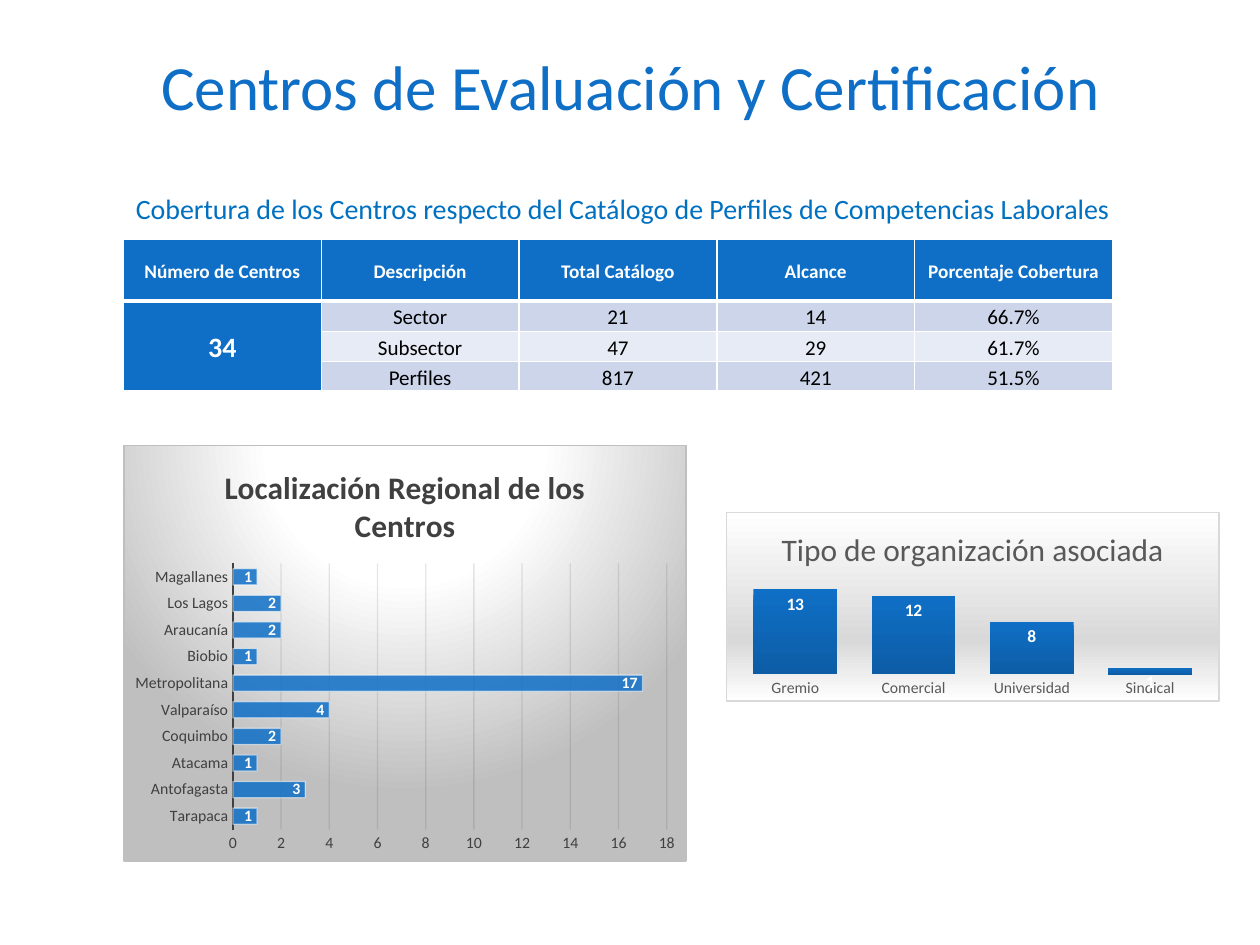
from pptx import Presentation
from pptx import oxml
from pptx import util as u
from pptx.chart.data import CategoryChartData
from pptx.dml.color import RGBColor
from pptx.enum import chart as ch, text
from pptx.oxml.ns import nsdecls

FONT = "Calibri"
BLUE = "0F6FC6"
HEADERS = ["Número de Centros", "Descripción", "Total Catálogo", "Alcance",
           "Porcentaje Cobertura"]
COVERAGE = [("Sector", "21", "14", "66.7%"),
            ("Subsector", "47", "29", "61.7%"),
            ("Perfiles", "817", "421", "51.5%")]
REGIONS = {"Tarapaca": 1, "Antofagasta": 3, "Atacama": 1, "Coquimbo": 2,
           "Valparaíso": 4, "Metropolitana": 17, "Biobio": 1, "Araucanía": 2,
           "Los Lagos": 2, "Magallanes": 1}
ORGANIZATIONS = {"Gremio": 13, "Comercial": 12, "Universidad": 8, "Sindical": 1}
LINEAR = '<a:lin ang="5400000" scaled="0"/>'
RADIAL = ('<a:path path="circle"><a:fillToRect l="50000" t="-80000" '
          'r="50000" b="180000"/></a:path>')


def rgb(color):
    return RGBColor.from_string(color)


def style(font, size, color, bold=False):
    font.name, font.size, font.bold = FONT, u.Pt(size), bold
    font.color.rgb = rgb(color)


def set_line(line, color, width):
    line.color.rgb = rgb(color)
    line.width = u.Pt(width)


def set_alpha(element, percent):
    for color in element.xpath(".//a:srgbClr"):
        color.append(oxml.parse_xml(
            f'<a:alpha {nsdecls("a")} val="{percent * 1000}"/>'))


def gradient(stops, direction):
    marks = "".join(f'<a:gs pos="{pos * 1000}"><a:srgbClr val="{color}"/></a:gs>'
                    for pos, color in stops)
    return f'<a:gradFill rotWithShape="1"><a:gsLst>{marks}</a:gsLst>{direction}</a:gradFill>'


def add_heading(slide, box):
    title = slide.shapes.title
    title.left, title.top, title.width, title.height = map(u.Inches, box)
    title.text_frame.text = "Centros de Evaluación y Certificación"
    title.text_frame.vertical_anchor = text.MSO_ANCHOR.MIDDLE
    paragraph = title.text_frame.paragraphs[0]
    paragraph.alignment = text.PP_ALIGN.LEFT
    style(paragraph.font, 36, BLUE)


def add_subtitle(slide, box):
    frame = slide.shapes.add_textbox(*map(u.Inches, box)).text_frame
    frame.word_wrap = True
    frame.auto_size = text.MSO_AUTO_SIZE.SHAPE_TO_FIT_TEXT
    frame.text = ("Cobertura de los Centros respecto del Catálogo de "
                  "Perfiles de Competencias Laborales")
    style(frame.paragraphs[0].font, 16, "0070C0")


def fill_cell(cell, words, fill, size, color, bold, top=1, bottom=1):
    cell.text = words
    cell.margin_left = cell.margin_right = u.Inches(0.07)
    cell.margin_top = cell.margin_bottom = 0
    if bold:
        cell.vertical_anchor = text.MSO_ANCHOR.MIDDLE
    paragraph = cell.text_frame.paragraphs[0]
    paragraph.alignment = text.PP_ALIGN.CENTER
    paragraph.line_spacing = 1.15
    style(paragraph.font, size, color, bold)
    properties = cell._tc.get_or_add_tcPr()
    for side, width in (("L", 1), ("R", 1), ("T", top), ("B", bottom)):
        properties.append(oxml.parse_xml(
            f'<a:ln{side} {nsdecls("a")} w="{u.Pt(width)}"><a:solidFill>'
            f'<a:srgbClr val="FFFFFF"/></a:solidFill></a:ln{side}>'))
    cell.fill.solid()
    cell.fill.fore_color.rgb = rgb(fill)


def add_coverage_table(slide, box):
    table = slide.shapes.add_table(4, 5, *map(u.Inches, box)).table
    table.horz_banding = False
    for column in table.columns:
        column.width = u.Inches(box[2] / 5)
    for row, height in zip(table.rows, (0.49, 0.24, 0.24, 0.21)):
        row.height = u.Inches(height)
    for c, header in enumerate(HEADERS):
        fill_cell(table.cell(0, c), header, BLUE, 11, "FFFFFF", True, bottom=3)
    table.cell(1, 0).merge(table.cell(3, 0))
    fill_cell(table.cell(1, 0), "34", BLUE, 16, "FFFFFF", True, top=3)
    for r, values in enumerate(COVERAGE, 1):
        band = "CCD5EA" if r % 2 else "E7EBF5"
        for c, value in enumerate(values, 1):
            fill_cell(table.cell(r, c), value, band, 12, "000000", False,
                      top=3 if r == 1 else 1)


def add_bars(slide, box, kind, counts, title, color, bold, gap, label_size,
             background, border):
    data = CategoryChartData()
    data.categories = list(counts)
    data.add_series("Series 1", list(counts.values()))
    chart = slide.shapes.add_chart(kind, *map(u.Inches, box), data).chart
    chart.has_legend = False
    style(chart.font, 10, "000000")
    chart.has_title = True
    chart.chart_title.include_in_layout = False
    chart.chart_title.text_frame.text = title
    style(chart.chart_title.text_frame.paragraphs[0].font, 18, color, bold)
    chart._chartSpace.chart.addnext(oxml.parse_xml(
        f'<c:spPr {nsdecls("c", "a")}>{background}<a:ln w="{u.Pt(0.75)}">'
        f'<a:solidFill><a:srgbClr val="{border}"/></a:solidFill></a:ln></c:spPr>'))

    plot = chart.plots[0]
    plot.gap_width = gap
    plot.vary_by_categories = False
    plot.has_data_labels = True
    labels = plot.data_labels
    labels.show_value = True
    labels.position = ch.XL_LABEL_POSITION.INSIDE_END
    style(labels.font, label_size, "FFFFFF", True)
    for axis in (chart.category_axis, chart.value_axis):
        axis.major_tick_mark = axis.minor_tick_mark = ch.XL_TICK_MARK.NONE
        axis.has_major_gridlines = False
        style(axis.tick_labels.font, 9, color)
        axis.format.line.fill.background()
    chart.value_axis.minimum_scale = 0
    return chart


def add_regions_chart(slide, box):
    chart = add_bars(
        slide, box, ch.XL_CHART_TYPE.BAR_CLUSTERED, REGIONS,
        "Localización Regional de los Centros", "404040", True, 65, 9,
        gradient([(0, "FFFFFF"), (39, "FFFFFF"), (100, "BFBFBF")], RADIAL), "BFBFBF")
    set_line(chart.category_axis.format.line, "404040", 1.5)
    values = chart.value_axis
    values.maximum_scale, values.major_unit = 18, 2
    values.has_major_gridlines = True
    set_line(values.major_gridlines.format.line, "0D0D0D", 0.75)
    set_alpha(values._element.find(oxml.ns.qn("c:majorGridlines")), 10)
    bars = chart.plots[0].series[0]
    bars.format.fill.solid()
    bars.format.fill.fore_color.rgb = rgb(BLUE)
    set_alpha(bars._element.spPr, 85)
    set_line(bars.format.line, "FFFFFF", 0.75)
    set_alpha(bars._element.spPr.find(oxml.ns.qn("a:ln")), 50)


def add_organizations_chart(slide, box):
    chart = add_bars(
        slide, box, ch.XL_CHART_TYPE.COLUMN_CLUSTERED, ORGANIZATIONS,
        "Tipo de organización asociada", "595959", False, 41, 10,
        gradient([(0, "FFFFFF"), (68, "D9D9D9"), (100, "FFFFFF")], LINEAR), "D9D9D9")
    chart.value_axis.visible = False
    fill = chart.plots[0].series[0].format.fill
    fill.gradient()
    fill.gradient_angle = 270
    for stop, color in zip(fill.gradient_stops, (BLUE, "0D5DA6")):
        stop.color.rgb = rgb(color)


def main():
    deck = Presentation()
    deck.slide_width, deck.slide_height = u.Inches(10), u.Inches(7.5)
    slide = deck.slides.add_slide(deck.slide_layouts[5])
    add_heading(slide, (1.18, 0.29, 8.51, 0.77))
    add_subtitle(slide, (0.98, 1.47, 8.7, 0.37))
    add_coverage_table(slide, (0.98, 1.9, 7.85, 1.2))
    add_regions_chart(slide, (0.98, 3.53, 4.47, 3.31))
    add_organizations_chart(slide, (5.76, 4.06, 3.92, 1.51))
    deck.save("out.pptx")


if __name__ == "__main__":
    main()
